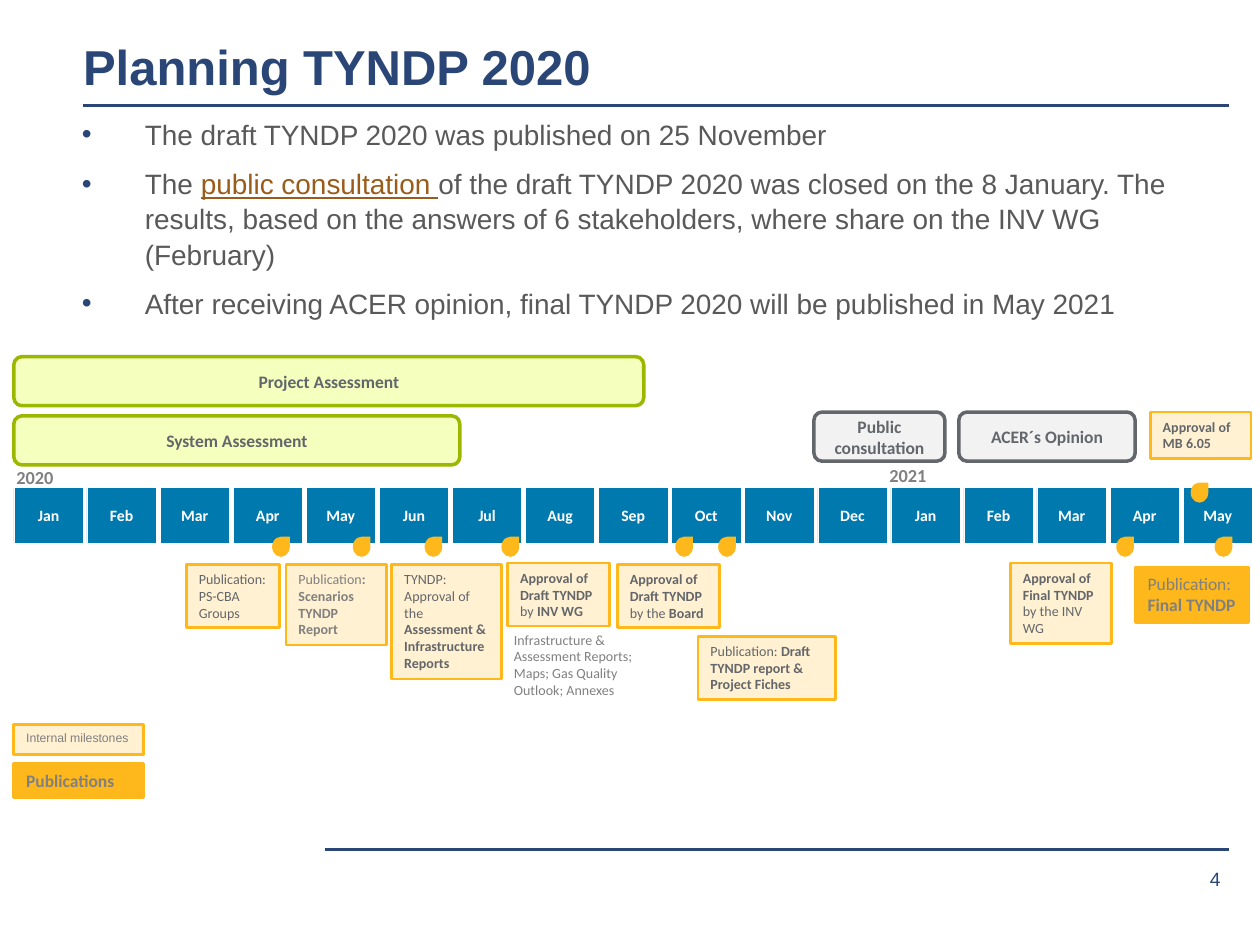
import dataclasses

import lxml.etree
import pptx
import pptx.dml.color
import pptx.enum.shapes
import pptx.enum.text
import pptx.oxml.ns
import pptx.util

Inches = pptx.util.Inches
Pt = pptx.util.Pt
SHAPE = pptx.enum.shapes.MSO_SHAPE
ALIGN = pptx.enum.text.PP_ALIGN
ANCHOR = pptx.enum.text.MSO_ANCHOR
qn = pptx.oxml.ns.qn

COLORS = {
    "navy": "2A4677", "body": "595959", "link": "9A5C1B", "blue": "007AAE",
    "white": "FFFFFF", "amber": "FFB81C", "cream": "FFF1D2", "lime": "F5FFBE",
    "green": "9CB700", "pale": "F2F2F2", "slate": "63666A", "gray": "808080",
}


@dataclasses.dataclass
class Run:
    text: str
    bold: bool = False
    color: str = ""
    underline: bool = False


@dataclasses.dataclass
class Style:
    size: float
    color: str
    font: str = "Calibri"
    align: ALIGN = ALIGN.LEFT
    anchor: ANCHOR = ANCHOR.TOP
    inset: bool = True


@dataclasses.dataclass
class Box:
    at: tuple[float, float, float, float]
    paragraphs: list[list[Run]]
    style: Style
    fill: str = ""
    line: str = ""
    line_width: float = 1.5
    kind: SHAPE = SHAPE.RECTANGLE


def rgb(name: str) -> pptx.dml.color.RGBColor:
    return pptx.dml.color.RGBColor.from_string(COLORS[name])


def place(shape, at: tuple[float, float, float, float]) -> None:
    shape.left, shape.top, shape.width, shape.height = map(Inches, at)


def write(text_frame, paragraphs: list[list[Run]], style: Style) -> None:
    text_frame.word_wrap = True
    text_frame.auto_size = pptx.enum.text.MSO_AUTO_SIZE.NONE
    text_frame.vertical_anchor = style.anchor
    if not style.inset:
        text_frame.margin_left = text_frame.margin_right = 0
        text_frame.margin_top = text_frame.margin_bottom = 0
    for index, runs in enumerate(paragraphs):
        paragraph = text_frame.add_paragraph() if index else text_frame.paragraphs[0]
        paragraph.alignment = style.align
        for item in runs:
            run = paragraph.add_run()
            run.text = item.text
            run.font.name = style.font
            run.font.size = Pt(style.size)
            run.font.bold = item.bold
            run.font.color.rgb = rgb(item.color or style.color)
            if item.underline:
                run.font.underline = True


def add_box(slide, box: Box) -> None:
    if box.fill:
        shape = slide.shapes.add_shape(box.kind, *map(Inches, box.at))
        shape.shadow.inherit = False
        shape.fill.solid()
        shape.fill.fore_color.rgb = rgb(box.fill)
        shape.line.color.rgb = rgb(box.line)
        shape.line.width = Pt(box.line_width)
    else:
        shape = slide.shapes.add_textbox(*map(Inches, box.at))
    write(shape.text_frame, box.paragraphs, box.style)


def add_rule(slide, left: float, right: float, top: float) -> None:
    rule = slide.shapes.add_connector(
        pptx.enum.shapes.MSO_CONNECTOR.STRAIGHT,
        Inches(left), Inches(top), Inches(right), Inches(top))
    rule.line.color.rgb = rgb("navy")
    rule.line.width = Pt(1.5)
    lxml.etree.SubElement(rule._element.spPr, qn("a:effectLst"))


def add_drop(slide, left: float, top: float) -> None:
    drop = slide.shapes.add_shape(
        SHAPE.TEAR, Inches(left), Inches(top), Inches(0.14), Inches(0.16))
    drop.shadow.inherit = False
    drop.fill.solid()
    drop.fill.fore_color.rgb = rgb("amber")
    drop.line.fill.background()


def add_bullet(paragraph) -> None:
    properties = paragraph._p.get_or_add_pPr()
    properties.set("marL", str(Inches(0.5)))
    properties.set("indent", str(-Inches(0.5)))
    color = lxml.etree.SubElement(properties, qn("a:buClr"))
    lxml.etree.SubElement(color, qn("a:srgbClr")).set("val", COLORS["navy"])
    lxml.etree.SubElement(properties, qn("a:buFont")).set("typeface", "Arial")
    lxml.etree.SubElement(properties, qn("a:buChar")).set("char", "•")


TITLE = Style(28, "navy", "Arial", anchor=ANCHOR.BOTTOM, inset=False)
BODY = Style(16, "body", "Arial", inset=False)
NUMBER = Style(11, "navy", "Arial", ALIGN.RIGHT, ANCHOR.MIDDLE, False)
MONTH = Style(9, "white", align=ALIGN.CENTER, anchor=ANCHOR.MIDDLE)
PHASE = Style(10, "slate", align=ALIGN.CENTER, anchor=ANCHOR.MIDDLE)
YEAR = Style(10.5, "gray", anchor=ANCHOR.MIDDLE, inset=False)
NOTE = Style(8, "slate")
GRAY_NOTE = Style(8, "gray")
PUBLICATION = Style(10, "gray")
LEGEND = Style(7, "gray", "Arial")

BULLETS = [
    [Run("The draft TYNDP 2020 was published on 25 November")],
    [Run("The "), Run("public consultation ", color="link", underline=True),
     Run("of the draft TYNDP 2020 was closed on the 8 January. The results, based on "
         "the answers of 6 stakeholders, where share on the INV WG (February)")],
    [Run("After receiving ACER opinion, final TYNDP 2020 will be published in May 2021")],
]
MONTHS = "Jan Feb Mar Apr May Jun Jul Aug Sep Oct Nov Dec Jan Feb Mar Apr May".split()
MONTH_LEFT, MONTH_STEP = 0.11, 0.58

# Phases: place, label, fill, outline
PHASES = [
    ((0.11, 2.83, 5, 0.39), "Project Assessment", "lime", "green"),
    ((0.11, 3.3, 3.54, 0.39), "System Assessment", "lime", "green"),
    ((6.46, 3.27, 1.04, 0.39), "Public consultation", "pale", "slate"),
    ((7.61, 3.27, 1.4, 0.39), "ACER´s Opinion", "pale", "slate"),
]
# Internal milestones: place, paragraphs, text style
MILESTONES = [
    ((1.48, 4.48, 0.74, 0.5), [[Run("Publication: PS-CBA Groups")]], NOTE),
    ((2.27, 4.48, 0.8, 0.64), [[Run("Publication"), Run(": Scenarios", True)],
                               [Run("TYNDP Report", True)]], GRAY_NOTE),
    ((3.11, 4.48, 0.87, 0.91), [[Run("TYNDP: Approval of the "),
                                 Run("Assessment & Infrastructure Reports", True)]], NOTE),
    ((4.03, 4.47, 0.81, 0.5), [[Run("Approval of Draft TYNDP ", True), Run("by "),
                                Run("INV WG", True)]], NOTE),
    ((4.9, 4.48, 0.81, 0.5), [[Run("Approval of Draft TYNDP ", True), Run("by the "),
                               Run("Board", True)]], NOTE),
    ((5.54, 5.05, 1.09, 0.5), [[Run("Publication: "),
                                Run("Draft TYNDP report & Project Fiches", True)]], NOTE),
    ((8.02, 4.47, 0.8, 0.64), [[Run("Approval of Final TYNDP ", True),
                                Run("by the INV WG")]], NOTE),
    ((9.13, 3.27, 0.8, 0.37), [[Run("Approval of MB 6.05", True)]], NOTE),
    ((0.11, 5.75, 1.03, 0.24), [[Run("Internal milestones")]], LEGEND),
]
PUBLICATIONS = [
    ((9.01, 4.5, 0.9, 0.44), [[Run("Publication:")], [Run("Final TYNDP", True)]]),
    ((0.11, 6.06, 1.03, 0.27), [[Run("Publications", True)]]),
]
LABELS = [
    Box((0.13, 3.7, 0.7, 0.18), [[Run("2020", True)]], YEAR),
    Box((7.06, 3.68, 0.7, 0.18), [[Run("2021", True)]], YEAR),
    Box((3.98, 4.96, 1.2, 0.64), [[Run(
        "Infrastructure & Assessment Reports; Maps; Gas Quality Outlook; Annexes")]], GRAY_NOTE),
    Box((8.94, 6.82, 0.79, 0.31), [[Run("4 ")]], NUMBER),
]
DROPS = [(left, 4.26) for left in (2.16, 2.8, 3.37, 3.98, 5.36, 5.7, 8.86, 9.64)]
DROPS.append((9.45, 3.83))


def main() -> None:
    presentation = pptx.Presentation()
    presentation.slide_width, presentation.slide_height = Inches(10), Inches(7.5)
    slide = presentation.slides.add_slide(presentation.slide_layouts[1])

    # Title, rules and bullet list
    add_rule(slide, 0.66, 9.75, 0.84)
    add_rule(slide, 2.58, 9.75, 6.74)
    title, body = slide.shapes.title, slide.placeholders[1]
    place(title, (0.66, 0.36, 9.11, 0.4))
    write(title.text_frame, [[Run("Planning TYNDP 2020", True)]], TITLE)
    place(body, (0.65, 0.92, 9.11, 5.22))
    write(body.text_frame, BULLETS, BODY)
    for index, paragraph in enumerate(body.text_frame.paragraphs):
        add_bullet(paragraph)
        paragraph.line_spacing = 1.05
        paragraph.space_before = Pt(8 if index else 0)

    # Timeline months and phases
    for index, month in enumerate(MONTHS):
        at = (MONTH_LEFT + index * MONTH_STEP, 3.87, 0.55, 0.44)
        add_box(slide, Box(at, [[Run(month, True)]], MONTH, "blue", "white", 0.25))
    for at, label, fill, line in PHASES:
        add_box(slide, Box(at, [[Run(label, True)]], PHASE, fill, line, 2,
                           SHAPE.ROUNDED_RECTANGLE))

    # Milestones, publications, labels and markers
    for at, paragraphs, style in MILESTONES:
        add_box(slide, Box(at, paragraphs, style, "cream", "amber"))
    for at, paragraphs in PUBLICATIONS:
        add_box(slide, Box(at, paragraphs, PUBLICATION, "amber", "amber"))
    for label in LABELS:
        add_box(slide, label)
    for left, top in DROPS:
        add_drop(slide, left, top)

    presentation.save("out.pptx")


if __name__ == "__main__":
    main()
